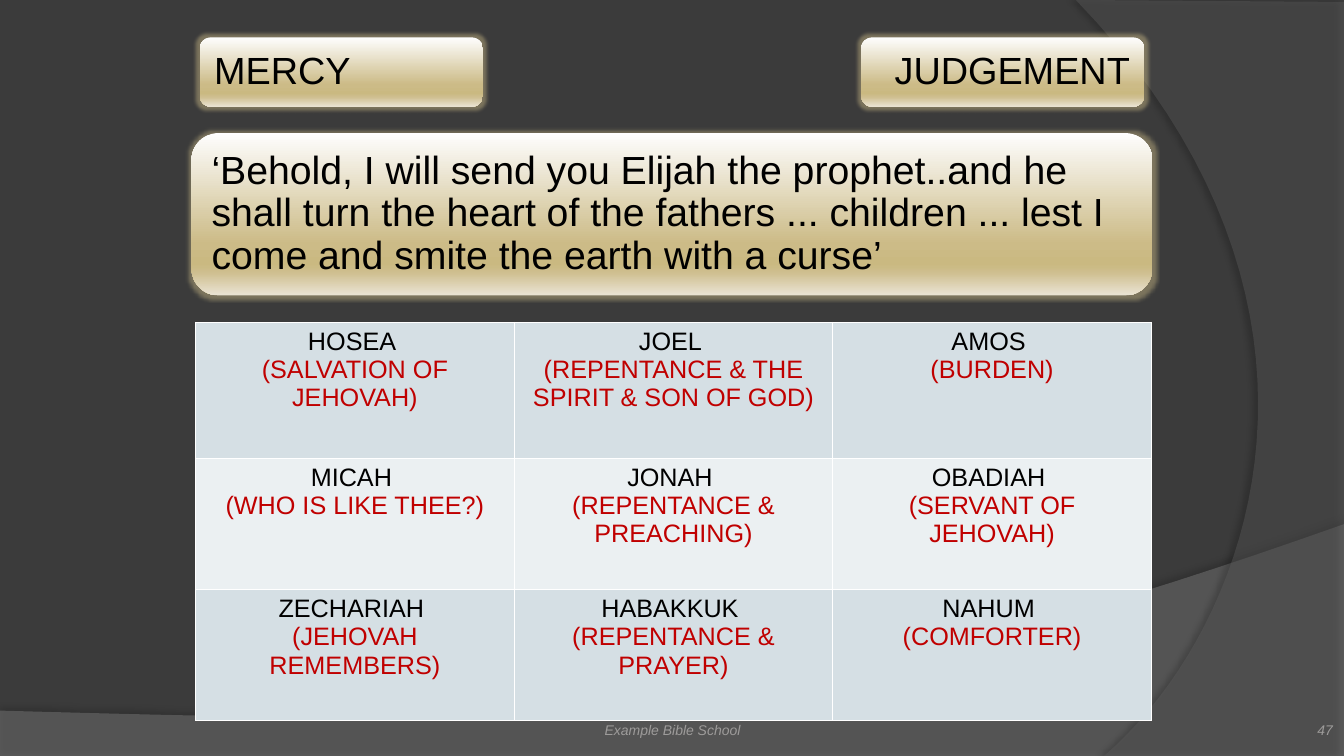
from lxml import etree
from pptx import Presentation
from pptx.dml.color import RGBColor
from pptx.enum.shapes import MSO_SHAPE
from pptx.enum.text import MSO_ANCHOR as Anchor, PP_ALIGN as Align
from pptx.oxml import parse_xml
from pptx.oxml.ns import nsdecls, qn
from pptx.util import Inches, Pt

BACKGROUND = RGBColor(0x3B, 0x3B, 0x3B)
WAVE = RGBColor(0x7F, 0x7F, 0x7F)
ARC = RGBColor(0x5E, 0x5E, 0x5E)
BLACK = RGBColor(0, 0, 0)
WHITE = RGBColor(0xFF, 0xFF, 0xFF)
RED = RGBColor(0xC0, 0, 0)
FOOTER = RGBColor(0x9D, 0x9B, 0x9A)
GLOW = RGBColor(0xCC, 0xBB, 0x87)
ROW_FILLS = (RGBColor(0xD5, 0xDF, 0xE4), RGBColor(0xEB, 0xF0, 0xF2))
GOLD_STOPS = (
    (0, RGBColor(0xFE, 0xFE, 0xFE)),
    (68, RGBColor(0xCC, 0xBB, 0x87)),
    (81, RGBColor(0xCA, 0xB9, 0x81)),
    (86, RGBColor(0xCF, 0xBF, 0x90)),
    (100, RGBColor(0xEA, 0xE3, 0xD3)),
)

PROPHETS = (
    (("HOSEA", "SALVATION OF JEHOVAH"),
     ("JOEL", "REPENTANCE & THE SPIRIT & SON OF GOD"),
     ("AMOS", "BURDEN")),
    (("MICAH", "WHO IS LIKE THEE?"),
     ("JONAH", "REPENTANCE & PREACHING"),
     ("OBADIAH", "SERVANT OF JEHOVAH")),
    (("ZECHARIAH", "JEHOVAH REMEMBERS"),
     ("HABAKKUK", "REPENTANCE & PRAYER"),
     ("NAHUM", "COMFORTER")),
)
ROW_HEIGHTS = (1.35, 1.3, 1.3)
VERSE = ("‘Behold, I will send you Elijah the prophet..and he shall turn the heart "
         "of the fathers ... children ... lest I come and smite the earth with a curse’")


def set_format(target, values):
    for name, value in values.items():
        setattr(target, name, value)


def add_run(paragraph, text, size, color, italic=False):
    run = paragraph.add_run()
    run.text = text
    set_format(run.font, {"name": "Arial", "size": Pt(size), "italic": italic})
    run.font.color.rgb = color


def color_xml(color, alpha=100):
    return f'<a:srgbClr val="{color}"><a:alpha val="{alpha * 1000}"/></a:srgbClr>'


def add_effect(shape, effect):
    properties = shape.element.spPr
    for old in properties.findall(qn("a:effectLst")):
        properties.remove(old)
    properties.append(parse_xml(f'<a:effectLst {nsdecls("a")}>{effect}</a:effectLst>'))


def curve(start, first, second, end, steps=40):
    points = []
    for step in range(1, steps + 1):
        t = step / steps
        weights = ((1 - t) ** 3, 3 * t * (1 - t) ** 2, 3 * t * t * (1 - t), t ** 3)
        points.append(tuple(
            sum(weight * point[axis] for weight, point in zip(weights, (start, first, second, end)))
            for axis in (0, 1)))
    return points


def add_backdrop(slide, points, color, alpha, shadow_alpha, distance, direction):
    corners = [(Inches(x), Inches(y)) for x, y in points]
    builder = slide.shapes.build_freeform(*corners[0])
    builder.add_line_segments(corners[1:], close=True)
    shape = builder.convert_to_shape()
    shape.fill.solid()
    shape.fill.fore_color.rgb = color
    shape.line.fill.background()
    fill_color = shape.element.spPr.find(qn("a:solidFill"))[0]
    etree.SubElement(fill_color, qn("a:alpha"), val=str(alpha * 1000))
    add_effect(shape, f'<a:outerShdw blurRad="{Pt(4)}" dist="{Pt(distance)}" '
                      f'dir="{direction * 60000}" algn="ctr" rotWithShape="0">'
                      f'{color_xml(BLACK, shadow_alpha)}</a:outerShdw>')


def add_background(slide):
    slide.background.fill.solid()
    slide.background.fill.fore_color.rgb = BACKGROUND
    wave = [(0, 7.05), (0, 7.51), (13.33, 7.51), (13.33, 5.2)]
    wave += curve(wave[-1], (7.45, 7.29), (5.21, 7.19), (0, 7.05))
    arc = [(13.33, 0.02), (13.33, 7.5), (10.95, 7.5)]
    arc += curve(arc[-1], (12.46, 6.19), (13.57, 3), (10.67, 0))
    add_backdrop(slide, wave, WAVE, 45, 35, 3.5, 270)
    add_backdrop(slide, arc, ARC, 40, 45, 4, 180)


def add_gold_card(slide, box, text, size, inset, align=Align.LEFT):
    shape = slide.shapes.add_shape(MSO_SHAPE.ROUNDED_RECTANGLE, *map(Inches, box))
    shape.line.fill.background()
    stops = "".join(f'<a:gs pos="{place * 1000}">{color_xml(color)}</a:gs>'
                    for place, color in GOLD_STOPS)
    shape.element.spPr.find(qn("a:prstGeom")).addnext(parse_xml(
        f'<a:gradFill {nsdecls("a")} rotWithShape="1"><a:gsLst>{stops}</a:gsLst>'
        '<a:lin ang="5400000" scaled="0"/></a:gradFill>'))
    add_effect(shape, f'<a:glow rad="{Pt(5)}">{color_xml(GLOW, 45)}</a:glow>')
    frame = shape.text_frame
    margins = {f"margin_{side}": Inches(inset) for side in ("left", "top", "right", "bottom")}
    set_format(frame, {"word_wrap": True, "vertical_anchor": Anchor.MIDDLE, **margins})
    paragraph = frame.paragraphs[0]
    set_format(paragraph, {"alignment": align, "line_spacing": 0.9})
    add_run(paragraph, text, size, BLACK)


def add_borders(cell):
    properties = cell._tc.get_or_add_tcPr()
    for index, side in enumerate(("lnL", "lnR", "lnT", "lnB")):
        properties.insert(index, parse_xml(
            f'<a:{side} {nsdecls("a")} w="{Pt(1)}"><a:solidFill>{color_xml(WHITE)}'
            f'</a:solidFill></a:{side}>'))


def add_prophet_table(slide, left, top, width):
    rows, columns = len(PROPHETS), len(PROPHETS[0])
    table = slide.shapes.add_table(rows, columns, Inches(left), Inches(top), Inches(width),
                                   Inches(sum(ROW_HEIGHTS))).table
    set_format(table, {"first_row": False, "horz_banding": False})
    for row_index, (prophets, height) in enumerate(zip(PROPHETS, ROW_HEIGHTS)):
        table.rows[row_index].height = Inches(height)
        for column_index, (name, meaning) in enumerate(prophets):
            cell = table.cell(row_index, column_index)
            cell.fill.solid()
            cell.fill.fore_color.rgb = ROW_FILLS[row_index % 2]
            add_borders(cell)
            paragraph = cell.text_frame.paragraphs[0]
            paragraph.alignment = Align.CENTER
            add_run(paragraph, f"{name} ", 18, BLACK)
            paragraph.add_line_break()
            add_run(paragraph, f"({meaning})", 18, RED)


def add_footer(slide, box, text, align):
    frame = slide.shapes.add_textbox(*map(Inches, box)).text_frame
    set_format(frame, {"word_wrap": True, "vertical_anchor": Anchor.BOTTOM, "margin_left": 0,
                       "margin_top": 0, "margin_right": 0, "margin_bottom": 0})
    paragraph = frame.paragraphs[0]
    paragraph.alignment = align
    add_run(paragraph, text, 10, FOOTER, italic=True)


def main():
    presentation = Presentation()
    set_format(presentation, {"slide_width": Inches(13.33), "slide_height": Inches(7.5)})
    slide = presentation.slides.add_slide(presentation.slide_layouts[6])
    add_background(slide)
    add_prophet_table(slide, 1.94, 3.2, 9.48)
    add_footer(slide, (4.56, 6.83, 4.22, 0.5), "Example Bible School", Align.CENTER)
    add_footer(slide, (10.44, 6.83, 2.78, 0.5), "47", Align.RIGHT)
    add_gold_card(slide, (1.98, 0.37, 2.81, 0.69), "MERCY", 27, 0.11)
    add_gold_card(slide, (8.54, 0.37, 2.81, 0.69), "JUDGEMENT", 27, 0.11, Align.RIGHT)
    add_gold_card(slide, (1.9, 1.32, 9.53, 1.61), VERSE, 28, 0.12)
    presentation.save("out.pptx")


if __name__ == "__main__":
    main()
